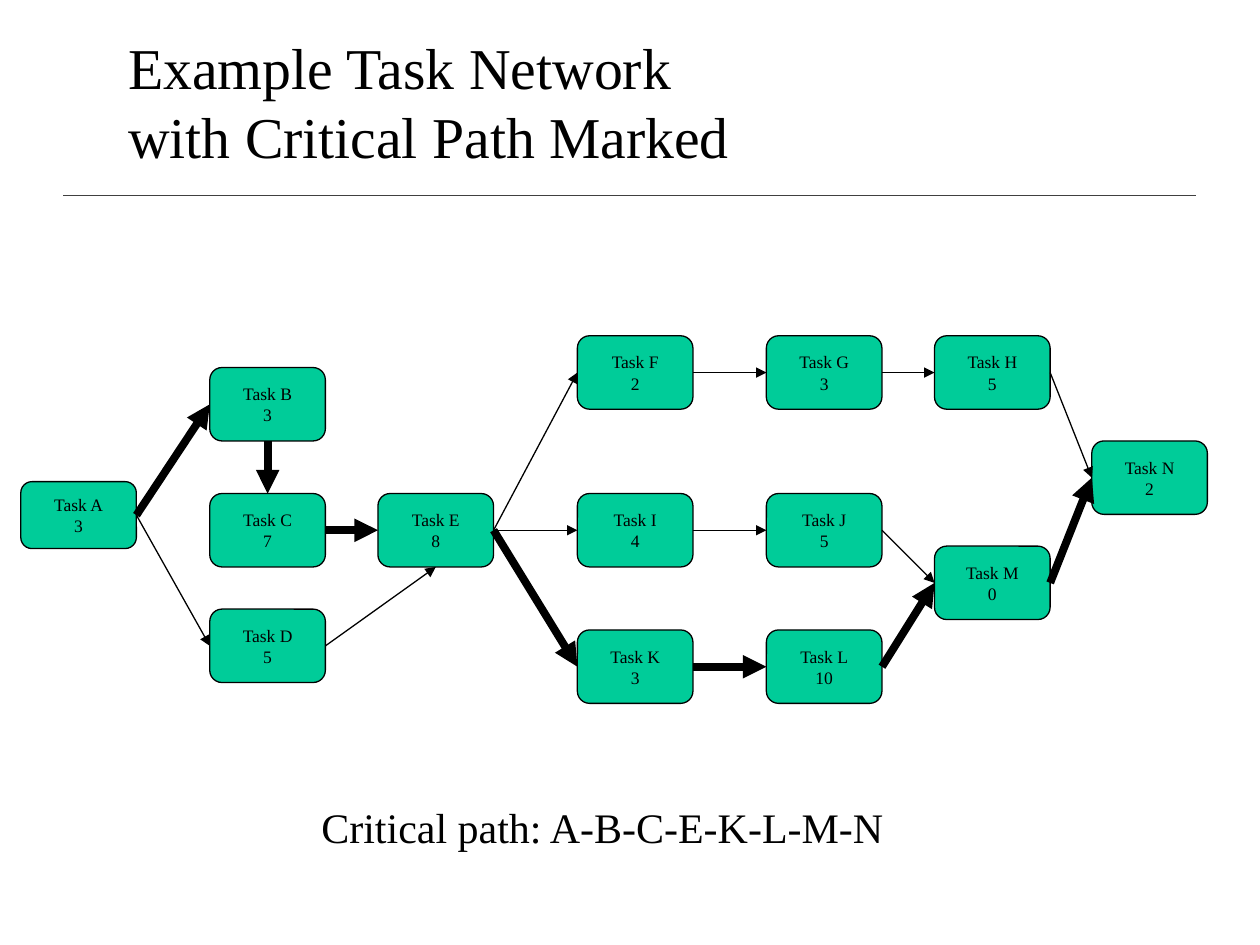
import pptx
import pptx.util
from pptx.dml.color import RGBColor
from pptx.enum.shapes import MSO_CONNECTOR, MSO_SHAPE
from pptx.enum.text import MSO_ANCHOR, MSO_AUTO_SIZE, PP_ALIGN
from pptx.oxml.ns import qn
from pptx.util import Cm, Pt

FONT = "Times New Roman"
BLACK = RGBColor(0x00, 0x00, 0x00)
GREY = RGBColor(0x40, 0x40, 0x40)
GREEN = RGBColor(0x00, 0xCC, 0x99)

TITLE = "Example Task Network\vwith Critical Path Marked"
CRITICAL_PATH = "A-B-C-E-K-L-M-N"

# Left edges of the task columns and the size of a task box, in cm
COLUMNS = [0.42, 4.23, 7.62, 11.64, 15.45, 18.84, 22.01]
TASK_WIDTH, TASK_HEIGHT = 2.33, 1.48
FIRST_TASK_HEIGHT = 1.35

# Task: (duration, column, top in cm)
TASKS = {
    "A": (3, 0, 9.71),
    "B": (3, 1, 7.41),
    "C": (7, 1, 9.95),
    "D": (5, 1, 12.28),
    "E": (8, 2, 9.95),
    "F": (2, 3, 6.77),
    "G": (3, 4, 6.77),
    "H": (5, 5, 6.77),
    "I": (4, 3, 9.95),
    "J": (5, 4, 9.95),
    "K": (3, 3, 12.7),
    "L": (10, 4, 12.7),
    "M": (0, 5, 11.01),
    "N": (2, 6, 8.89),
}
DEPENDENCIES = ["AB", "AD", "BC", "CE", "DE", "EF", "EI", "EK", "FG", "GH",
                "HN", "IJ", "JM", "KL", "LM", "MN"]

# Connection sites of a rounded rectangle
TOP, LEFT, BOTTOM, RIGHT = range(4)
SPECIAL_SITES = {"BC": (BOTTOM, TOP), "DE": (RIGHT, BOTTOM)}


def format_paragraphs(text_frame, size, alignment):
    for paragraph in text_frame.paragraphs:
        paragraph.alignment = alignment
        paragraph.font.name = FONT
        paragraph.font.size = Pt(size)
        paragraph.font.color.rgb = BLACK


def add_line(slide, color, width, start=(0, 0), end=(0, 0)):
    line = slide.shapes.add_connector(
        MSO_CONNECTOR.STRAIGHT, *(Cm(value) for value in start + end))
    line.line.color.rgb = color
    line.line.width = Pt(width)
    properties = line._element.spPr
    properties.append(properties.makeelement(qn("a:effectLst"), {}))
    return line


def add_title(slide):
    title = slide.shapes.title
    title.left, title.top = Cm(2.33), Cm(0.03)
    title.width, title.height = Cm(21.6), Cm(4)
    title.text_frame.text = TITLE
    title.text_frame.auto_size = MSO_AUTO_SIZE.NONE
    title.text_frame.vertical_anchor = MSO_ANCHOR.MIDDLE
    format_paragraphs(title.text_frame, 33, PP_ALIGN.LEFT)


def add_task(slide, name):
    duration, column, top = TASKS[name]
    height = FIRST_TASK_HEIGHT if column == 0 else TASK_HEIGHT
    box = slide.shapes.add_shape(
        MSO_SHAPE.ROUNDED_RECTANGLE,
        Cm(COLUMNS[column]), Cm(top), Cm(TASK_WIDTH), Cm(height))
    box.shadow.inherit = False
    box.fill.solid()
    box.fill.fore_color.rgb = GREEN
    box.line.color.rgb = BLACK
    box.line.width = Pt(0.75)
    box.text_frame.text = f"Task {name}\n{duration}"
    box.text_frame.word_wrap = False
    box.text_frame.vertical_anchor = MSO_ANCHOR.MIDDLE
    format_paragraphs(box.text_frame, 10, PP_ALIGN.CENTER)
    return box


def add_dependency(slide, boxes, pair):
    """Join two tasks with an arrow, thick where it is on the critical path."""
    first, second = pair
    critical = f"{first}-{second}" in CRITICAL_PATH
    arrow = add_line(slide, BLACK, 4.5 if critical else 0.75)
    begin_site, end_site = SPECIAL_SITES.get(pair, (RIGHT, LEFT))
    arrow.begin_connect(boxes[first], begin_site)
    arrow.end_connect(boxes[second], end_site)
    outline = arrow.line._get_or_add_ln()
    outline.append(outline.makeelement(qn("a:tailEnd"), {"type": "triangle"}))


def add_caption(slide):
    caption = slide.shapes.add_textbox(Cm(6.2), Cm(16.03), Cm(11.89), Cm(1.27))
    caption.text_frame.text = f"Critical path: {CRITICAL_PATH}"
    caption.text_frame.word_wrap = False
    caption.text_frame.auto_size = MSO_AUTO_SIZE.SHAPE_TO_FIT_TEXT
    format_paragraphs(caption.text_frame, 24, PP_ALIGN.CENTER)


def main():
    presentation = pptx.Presentation()
    presentation.slide_width, presentation.slide_height = Cm(25.4), Cm(19.05)
    slide = presentation.slides.add_slide(presentation.slide_layouts[5])
    add_line(slide, GREY, 1, (1.27, 3.94), (24.1, 3.94))
    add_title(slide)
    boxes = {name: add_task(slide, name) for name in TASKS}
    for pair in DEPENDENCIES:
        add_dependency(slide, boxes, pair)
    add_caption(slide)
    presentation.save("out.pptx")


if __name__ == "__main__":
    main()
